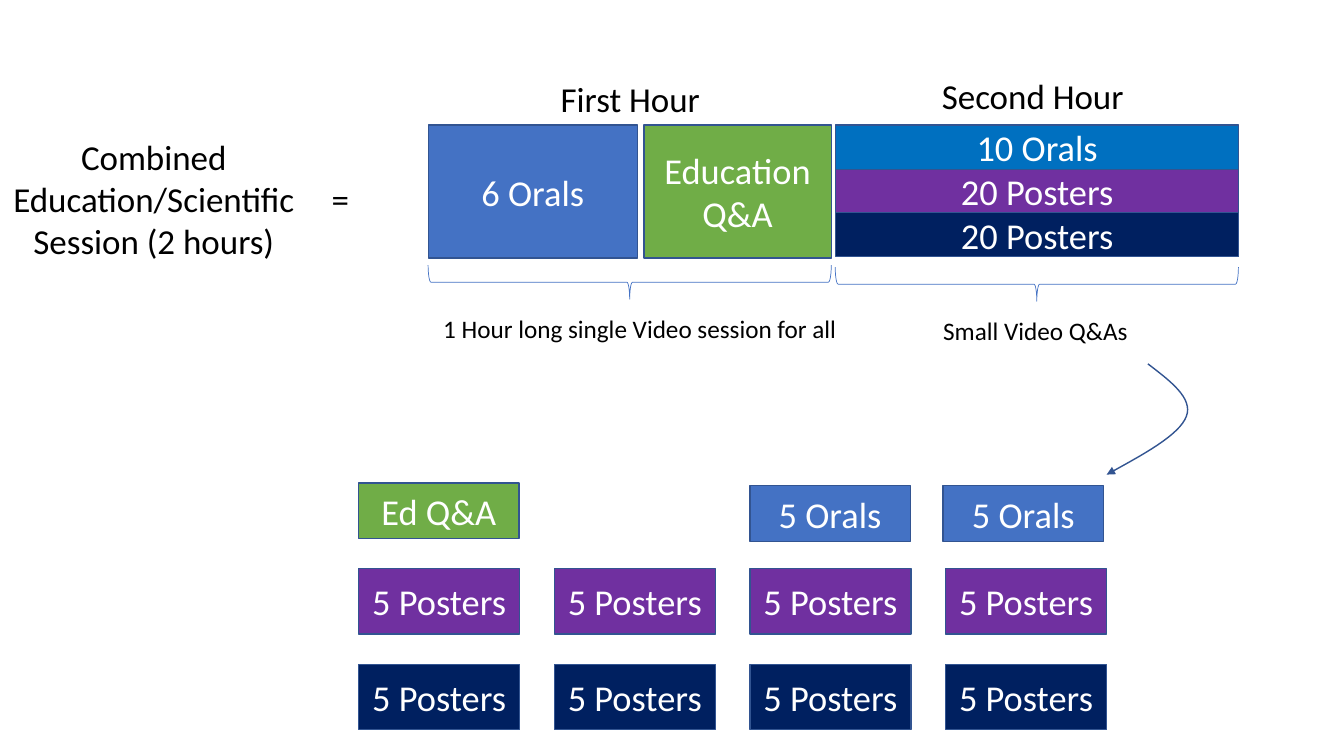
from lxml import etree
from pptx import Presentation
from pptx.dml.color import RGBColor
from pptx.enum.shapes import MSO_SHAPE as Shape
from pptx.enum.text import MSO_ANCHOR as Anchor, PP_ALIGN as Align
from pptx.oxml.ns import qn
from pptx.util import Cm, Pt

COLOURS = {
    "black": "000000", "white": "FFFFFF", "blue": "4472C4", "edge": "325491",
    "green": "70AD47", "purple": "7030A0", "navy": "002060", "sky": "0070C0",
}
BLOCK_FONT = {"name": "Calibri", "size": Pt(26)}
LABEL_FONT = {"name": "Calibri", "size": Pt(25)}
CAPTION_FONT = {"name": "Calibri", "size": Pt(18)}

HOUR_TOP, HOUR_HEIGHT = 3.15, 3.35
STRIP_LEFT, STRIP_PITCH = 21.06, 1.1
GRID_LEFT, GRID_PITCH = 9.04, 4.93
CURVE_STEPS = 16
CURVE_START = (28.93, 9.17)
CURVE_PARTS = [
    ((29.49, 9.6), (30.07, 10.03), (29.9, 10.49)),
    ((29.72, 10.97), (28.8, 11.46), (27.89, 11.96)),
]


def colour(name):
    return RGBColor.from_string(COLOURS[name])


def write(frame, text, font, ink, align):
    for index, line in enumerate(text.split("\n")):
        para = frame.paragraphs[0] if index == 0 else frame.add_paragraph()
        para.alignment = align
        span = para.add_run()
        span.text = line
        for key, value in font.items():
            setattr(span.font, key, value)
        span.font.color.rgb = colour(ink)


def outline(shape, line_colour, width):
    shape.shadow.inherit = False
    shape.line.color.rgb = colour(line_colour)
    shape.line.width = Pt(width)


def add_block(page, text, fill, left, top, width, height):
    block = page.shapes.add_shape(
        Shape.RECTANGLE, Cm(left), Cm(top), Cm(width), Cm(height))
    outline(block, "edge", 1)
    block.fill.solid()
    block.fill.fore_color.rgb = colour(fill)
    block.text_frame.word_wrap = True
    block.text_frame.vertical_anchor = Anchor.MIDDLE
    write(block.text_frame, text, BLOCK_FONT, "white", Align.CENTER)


def add_label(page, text, left, top, width, height=1.32,
              font=LABEL_FONT, align=Align.CENTER, wrap=True):
    box = page.shapes.add_textbox(Cm(left), Cm(top), Cm(width), Cm(height))
    box.text_frame.word_wrap = wrap
    write(box.text_frame, text, font, "black", align)


def add_caption(page, text, left, top, width):
    add_label(page, text, left, top, width, 1.02, CAPTION_FONT, Align.LEFT, False)


def add_brace(page, left, top):
    brace = page.shapes.add_shape(
        Shape.LEFT_BRACE, Cm(left), Cm(top), Cm(0.86), Cm(10.16))
    brace.rotation = 270
    brace.fill.background()
    outline(brace, "blue", 0.5)


def curve_points():
    start = CURVE_START
    for first, second, end in CURVE_PARTS:
        for step in range(1, CURVE_STEPS + 1):
            t = step / CURVE_STEPS
            weights = ((1 - t) ** 3, 3 * t * (1 - t) ** 2, 3 * t * t * (1 - t), t ** 3)
            corners = (start, first, second, end)
            yield tuple(
                Cm(sum(weight * corner[axis] for weight, corner in zip(weights, corners)))
                for axis in (0, 1))
        start = end


def add_curved_arrow(page):
    builder = page.shapes.build_freeform(*(Cm(value) for value in CURVE_START))
    builder.add_line_segments(list(curve_points()), close=False)
    arrow = builder.convert_to_shape()
    arrow.fill.background()
    outline(arrow, "edge", 1)
    etree.SubElement(arrow.line._get_or_add_ln(), qn("a:tailEnd"), type="triangle")


def add_session_plan(page):
    add_label(page, "Combined\nEducation/Scientific\nSession (2 hours)",
              -2.49, 3.28, 12.73, 3.45)
    add_label(page, "=", 5.44, 4.34, 6.27)
    add_label(page, "First Hour", 12.09, 1.83, 7.59)
    add_label(page, "Second Hour", 22.23, 1.75, 7.59)
    add_block(page, "6 Orals", "blue", 10.8, HOUR_TOP, 5.26, HOUR_HEIGHT)
    add_block(page, "Education\nQ&A", "green", 16.23, HOUR_TOP, 4.72, HOUR_HEIGHT)
    strips = [(1, "20 Posters", "purple"), (2, "20 Posters", "navy"), (0, "10 Orals", "sky")]
    for row, text, fill in strips:
        add_block(page, text, fill, STRIP_LEFT, HOUR_TOP + row * STRIP_PITCH, 10.16, 1.12)
    add_brace(page, 15.44, 2.03)
    add_brace(page, 25.7, 2.08)
    add_caption(page, "1 Hour long single Video session for all", 10.92, 7.77, 10.57)
    add_caption(page, "Small Video Q&As", 23.52, 7.82, 5.18)


def add_small_sessions(page):
    add_block(page, "Ed Q&A", "green", GRID_LEFT, 12.17, 4.04, 1.4)
    for left in (18.9, 23.77):
        add_block(page, "5 Orals", "blue", left, 12.24, 4.04, 1.4)
    for top, fill in ((14.33, "purple"), (16.74, "navy")):
        for column in range(4):
            add_block(page, "5 Posters", fill,
                      GRID_LEFT + column * GRID_PITCH, top, 4.06, 1.65)


def main():
    deck = Presentation()
    deck.slide_width, deck.slide_height = Cm(33.87), Cm(19.05)
    page = deck.slides.add_slide(deck.slide_layouts[6])
    add_session_plan(page)
    add_small_sessions(page)
    add_curved_arrow(page)
    deck.save("out.pptx")


if __name__ == "__main__":
    main()
